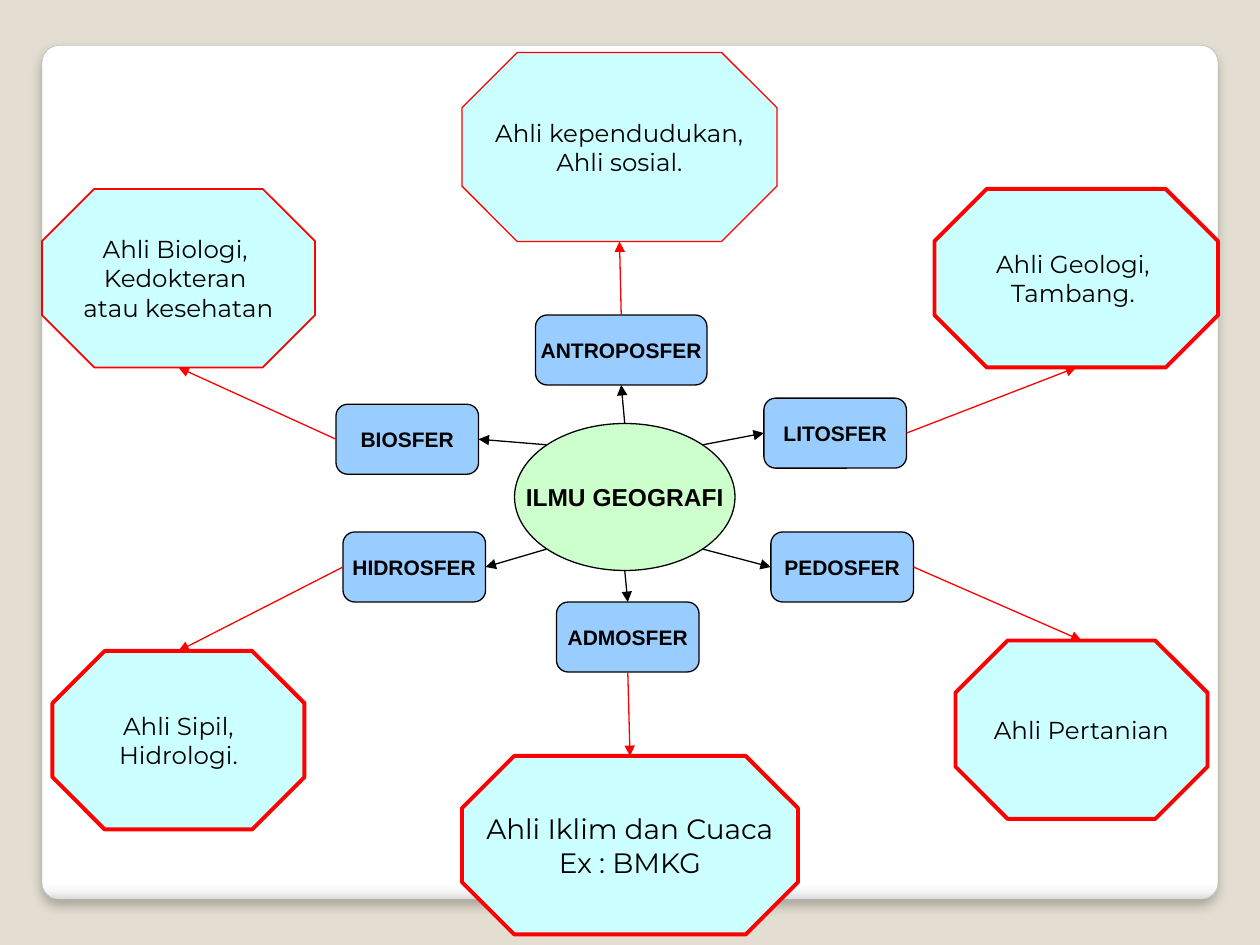
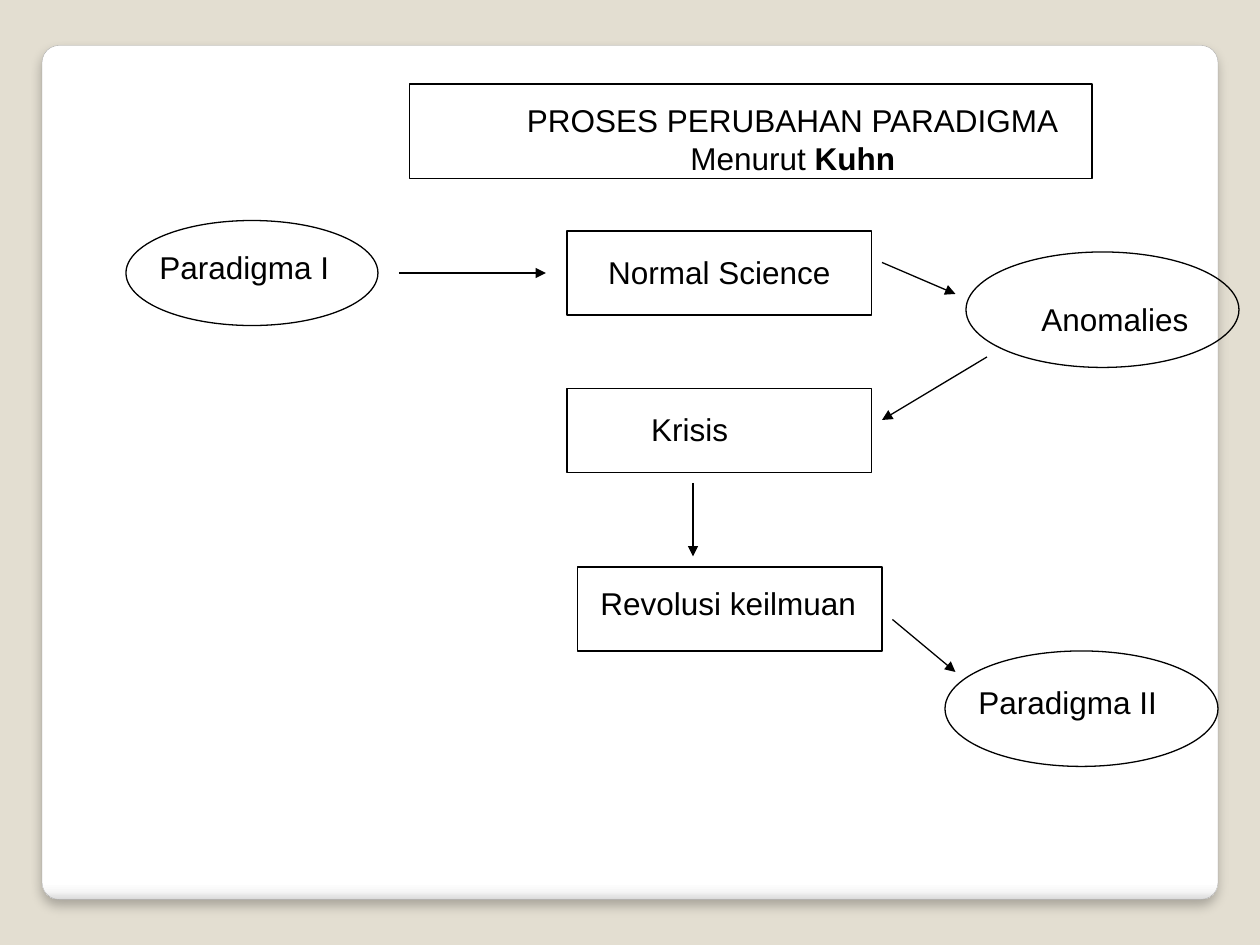
import pptx
import pptx.dml.color
import pptx.enum.shapes
import pptx.enum.text
import pptx.oxml
import pptx.oxml.ns
import pptx.util

Pt = pptx.util.Pt
RGBColor = pptx.dml.color.RGBColor
SHAPE = pptx.enum.shapes.MSO_SHAPE
ALIGN = pptx.enum.text.PP_ALIGN
ANCHOR = pptx.enum.text.MSO_ANCHOR

BACKDROP = RGBColor(0xE3, 0xDE, 0xD1)
CARD_EDGE = RGBColor(0xA4, 0xA4, 0xA4)
BLACK = RGBColor(0x00, 0x00, 0x00)
RED = RGBColor(0xFF, 0x00, 0x00)
SPHERE_BLUE = RGBColor(0x99, 0xCC, 0xFF)
EXPERT_CYAN = RGBColor(0xCC, 0xFF, 0xFF)
HUB_GREEN = RGBColor(0xCC, 0xFF, 0xCC)

LABEL_FONT = "Arial"
EXPERT_FONT = "Montserrat"
THIN = 0.75

CARD = (24, 26, 672, 488)
CARD_GRADIENT = [(0, "FFFFFF"), (98, "FFFFFF"), (99, "F7F7F7"), (100, "DADADA")]

# Slide 1: direction from the hub, sphere, its box, experts, their box, text size, outline
HUB = ("ILMU GEOGRAFI", (294, 242, 126, 84))
SPHERES = [
    ((-1, 1), "HIDROSFER", (196, 304, 81.5, 40),
     ["Ahli Sipil,", "Hidrologi."], (30, 372, 144, 102), 14, 2.25),
    ((-1, -1), "BIOSFER", (192, 231, 81.5, 40),
     ["Ahli Biologi, ", "Kedokteran ", "atau kesehatan"], (24, 108, 156, 102), 14, 1),
    ((1, -1), "LITOSFER", (436.5, 227.5, 81.5, 40),
     ["Ahli Geologi, ", "Tambang. "], (534, 108, 162, 102), 14, 2.25),
    ((1, 1), "PEDOSFER", (440.5, 304, 81.5, 40),
     ["Ahli Pertanian"], (546, 366, 144, 102), 14, 2.25),
    ((0, 1), "ADMOSFER", (318, 344, 81.5, 40),
     ["Ahli Iklim dan Cuaca", "Ex : BMKG"], (264, 432, 192, 102), 16, 2.25),
    ((0, -1), "ANTROPOSFER", (306, 180, 98, 40),
     ["Ahli kependudukan,", "Ahli sosial."], (264, 30, 180, 108), 14, THIN),
]

# Slide 2: stage, outline, its box, label box
TITLE_FRAME = (234, 48, 390, 54)
TITLE_BOX = (258, 54, 390, 50)
STAGES = [
    ("Paradigma I", SHAPE.OVAL, (72, 126, 144, 60), (84, 138, 120, 29)),
    ("Normal Science", SHAPE.RECTANGLE, (324, 132, 174, 48), (340.5, 141, 150, 29)),
    ("Anomalies", SHAPE.OVAL, (552, 144, 156, 66), (588, 168, 108, 29)),
    ("Krisis", SHAPE.RECTANGLE, (324, 222, 174, 48), (365, 231, 120, 29)),
    ("Revolusi keilmuan", SHAPE.RECTANGLE, (330, 324, 174, 48), (336, 330, 166, 29)),
    ("Paradigma II", SHAPE.OVAL, (540, 372, 156, 66), (552, 387, 120, 29)),
]
STAGE_ARROWS = [
    ((228, 156), (312, 156)),
    ((504, 150), (546, 168)),
    ((564, 204), (504, 240)),
    ((396, 276), (396, 318)),
    ((510, 354), (546, 384)),
]


def points(values):
    return [Pt(value) for value in values]


def xml(tag, inner="", **attributes):
    listed = "".join(f' {key}="{value}"' for key, value in attributes.items())
    return f"<a:{tag}{listed}>{inner}</a:{tag}>"


def element(tag, inner="", **attributes):
    namespace = pptx.oxml.ns.nsdecls("a")
    return pptx.oxml.parse_xml(
        xml(tag, inner, **attributes).replace(f"<a:{tag}", f"<a:{tag} {namespace}", 1))


def add_outline(slide, kind, box, fill=None, edge=BLACK, weight=THIN):
    outline = slide.shapes.add_shape(kind, *points(box))
    outline.shadow.inherit = False
    if fill is None:
        outline.fill.background()
    else:
        outline.fill.solid()
        outline.fill.fore_color.rgb = fill
    outline.line.color.rgb = edge
    outline.line.width = Pt(weight)
    return outline


def write(frame, lines, size, font=LABEL_FONT, bold=False, align=ALIGN.CENTER):
    frame.text = "\n".join(lines)
    for paragraph in frame.paragraphs:
        paragraph.alignment = align
        paragraph.font.name = font
        paragraph.font.size = Pt(size)
        paragraph.font.bold = bold
        paragraph.font.color.rgb = BLACK


def add_node(slide, kind, box, lines, size, fill, edge=BLACK, weight=THIN, **style):
    node = add_outline(slide, kind, box, fill, edge, weight)
    node.text_frame.word_wrap = False
    node.text_frame.vertical_anchor = ANCHOR.MIDDLE
    write(node.text_frame, lines, size, **style)


def add_arrow(slide, start, end, color=BLACK):
    arrow = slide.shapes.add_connector(
        pptx.enum.shapes.MSO_CONNECTOR.STRAIGHT, *points(start + end))
    arrow.line.color.rgb = color
    arrow.line.width = Pt(THIN)
    arrow.line.fill
    properties = arrow.element.spPr
    properties.find(pptx.oxml.ns.qn("a:ln")).append(element("tailEnd", type="triangle"))
    properties.append(element("effectLst"))


def anchor(box, across, down):
    """Point at -1..1 of the box's half width and half height from its centre."""
    left, top, width, height = box
    return (left + width * (1 + across) / 2, top + height * (1 + down) / 2)


def set_master(master, slide):
    """Give the master its backdrop and the white card shared by all slides."""
    master.background.fill.solid()
    master.background.fill.fore_color.rgb = BACKDROP

    card = add_outline(slide, SHAPE.ROUNDED_RECTANGLE, CARD, edge=CARD_EDGE, weight=0.16)
    card.adjustments[0] = 0.02
    card.fill.gradient()
    card.fill.gradient_angle = 270
    properties = card.element.spPr
    stops = "".join(xml("gs", xml("srgbClr", val=color), pos=place * 1000)
                    for place, color in CARD_GRADIENT)
    old_stops = properties.find(".//" + pptx.oxml.ns.qn("a:gsLst"))
    old_stops.getparent().replace(old_stops, element("gsLst", stops))
    shade = xml("srgbClr", xml("alpha", val=25000), val="000000")
    properties.find(pptx.oxml.ns.qn("a:effectLst")).append(
        element("outerShdw", shade, blurRad=Pt(6), dist=Pt(4), dir=90 * 60000))
    card.element.nvSpPr.cNvPr.set("id", "100")
    master.shapes.element.insert(2, card.element)


def build_geography(slide):
    hub_name, hub_box = HUB
    for _, sphere, box, experts, expert_box, size, weight in SPHERES:
        add_node(slide, SHAPE.ROUNDED_RECTANGLE, box, [sphere], 12, SPHERE_BLUE, bold=True)
        add_node(slide, SHAPE.OCTAGON, expert_box, experts, size, EXPERT_CYAN,
                 RED, weight, font=EXPERT_FONT)
    add_node(slide, SHAPE.OVAL, hub_box, [hub_name], 14, HUB_GREEN, bold=True)

    # Arrows run hub -> sphere -> experts; diagonals leave the oval at 45 degrees
    for (across, down), _, box, _, expert_box, _, _ in SPHERES:
        reach = 0.71 if across else 1
        side = (across, 0 if across else down)
        add_arrow(slide, anchor(hub_box, across * reach, down * reach),
                  anchor(box, -side[0], -side[1]))
        add_arrow(slide, anchor(box, *side), anchor(expert_box, 0, -down), RED)


def build_paradigm(slide):
    # Title in its frame
    add_outline(slide, SHAPE.RECTANGLE, TITLE_FRAME)
    title = slide.shapes.title
    title.left, title.top, title.width, title.height = points(TITLE_BOX)
    frame = title.text_frame
    frame.auto_size = pptx.enum.text.MSO_AUTO_SIZE.NONE
    frame.vertical_anchor = ANCHOR.TOP
    write(frame, ["PROSES PERUBAHAN PARADIGMA", "Menurut "], 18)
    author = frame.paragraphs[1].add_run()
    author.text = "Kuhn"
    author.font.bold = True

    # Stages and the arrows between them
    for stage, kind, box, label_box in STAGES:
        add_outline(slide, kind, box)
        label = slide.shapes.add_textbox(*points(label_box))
        label.text_frame.word_wrap = True
        write(label.text_frame, [stage], 18, align=ALIGN.LEFT)
    for start, end in STAGE_ARROWS:
        add_arrow(slide, start, end)


def main():
    deck = pptx.Presentation()
    deck.slide_width, deck.slide_height = Pt(720), Pt(540)
    geography = deck.slides.add_slide(deck.slide_layouts.get_by_name("Blank"))
    paradigm = deck.slides.add_slide(deck.slide_layouts.get_by_name("Title Only"))
    set_master(deck.slide_master, geography)
    build_geography(geography)
    build_paradigm(paradigm)
    deck.save("out.pptx")


if __name__ == "__main__":
    main()
